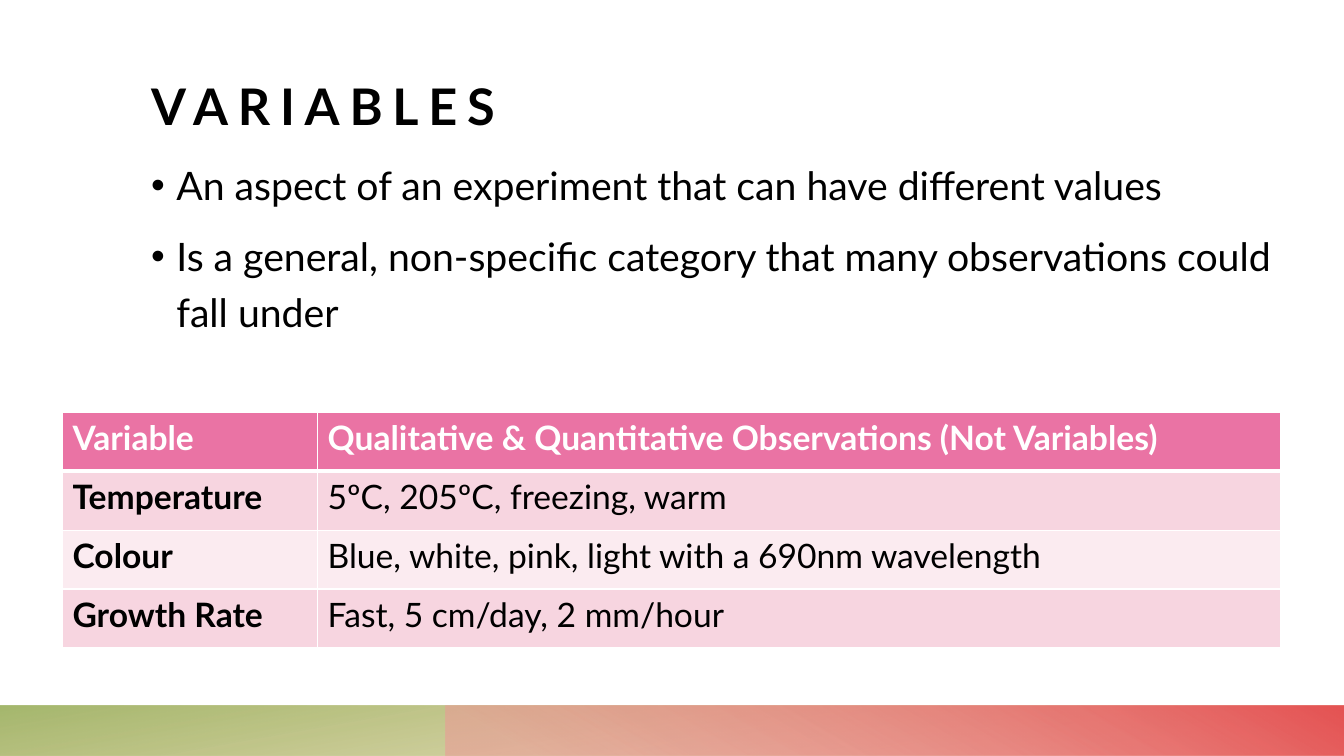
"""Build a slide on variables with a bullet list and a table of examples."""
from lxml.etree import SubElement
from pptx import Presentation
from pptx.dml.color import RGBColor
from pptx.enum.shapes import MSO_SHAPE
from pptx.enum.text import MSO_ANCHOR, MSO_AUTO_SIZE
from pptx.oxml.ns import qn
from pptx.util import Inches, Pt

TITLE = "VARIABLES"
POINTS = [
    "An aspect of an experiment that can have different values",
    "Is a general, non-specific category that many observations could fall under",
]
ROWS = [
    ("Variable", "Qualitative & Quantitative Observations (Not Variables)"),
    ("Temperature", "5ºC, 205ºC, freezing, warm"),
    ("Colour", "Blue, white, pink, light with a 690nm wavelength"),
    ("Growth Rate", "Fast, 5 cm/day, 2 mm/hour"),
]
FONT = "Lato"
COLORS = {
    "ink": "000000", "white": "FFFFFF", "head": "EA73A4",
    "odd": "F7D5E0", "even": "FBEBF0",
    "olive": "B6A343", "green": "95AB54", "blush": "EF9898", "red": "E55454",
}
WIDE, HIGH = 13.33, 7.5
BAND = HIGH / 15
SPLIT = 4.42
LEFT, SPAN = 1.5, 11.2
COLS, ROW = (2.53, 9.55), 0.585
BARS = [
    (0, WIDE, 180, 100, [(14, "olive", 28), (100, "green", 85)]),
    (SPLIT, WIDE - SPLIT, 0, 240, [(9, "blush", 55), (99, "red", 100)]),
]


def node(parent, tag, **attrs):
    return SubElement(parent, qn(tag), {k: str(v) for k, v in attrs.items()})


def style(par, size, color="ink", bold=False):
    for run in par.runs:
        font = run.font
        font.name, font.size, font.bold = FONT, Pt(size), bold
        font.color.rgb = RGBColor.from_string(COLORS[color])


def place(shape, left, top, width, height):
    shape.left, shape.top = Inches(left), Inches(top)
    shape.width, shape.height = Inches(width), Inches(height)


def clear(frame, anchor):
    frame.margin_left = frame.margin_right = 0
    frame.margin_top = frame.margin_bottom = 0
    frame.word_wrap = True
    frame.auto_size = MSO_AUTO_SIZE.NONE
    frame.vertical_anchor = anchor


def add_bar(slide, left, width, turn, angle, stops):
    bar = slide.shapes.add_shape(
        MSO_SHAPE.RECTANGLE, Inches(left), Inches(HIGH - BAND),
        Inches(width), Inches(BAND))
    bar.shadow.inherit = False
    bar.line.fill.background()
    bar.rotation = turn
    bar._element.spPr.find(qn("a:xfrm")).set("flipH", "1")
    bar.fill.gradient()
    grad = bar._element.spPr.find(qn("a:gradFill"))
    for child in list(grad):
        grad.remove(child)
    grad.set("rotWithShape", "1")
    group = node(grad, "a:gsLst")
    for spot, name, alpha in stops:
        stop = node(group, "a:gs", pos=spot * 1000)
        color = node(stop, "a:srgbClr", val=COLORS[name])
        node(color, "a:alpha", val=alpha * 1000)
    node(grad, "a:lin", ang=angle * 60000, scaled=0)


def add_title(slide):
    title = slide.shapes.title
    place(title, LEFT, 0, SPAN, 1.35)
    frame = title.text_frame
    frame.text = TITLE
    clear(frame, MSO_ANCHOR.BOTTOM)
    par = frame.paragraphs[0]
    par._p.get_or_add_pPr().set("algn", "l")
    style(par, 36, bold=True)
    par.runs[0].font._element.set("spc", "700")


def add_list(slide):
    body = slide.placeholders[1]
    place(body, LEFT, 1.51, SPAN, 4.76)
    frame = body.text_frame
    frame.text = "\n".join(POINTS)
    clear(frame, MSO_ANCHOR.TOP)
    for par in frame.paragraphs:
        par.line_spacing, par.space_before = 1.2, Pt(10)
        props = par._p.get_or_add_pPr()
        props.set("marL", str(Inches(0.25)))
        props.set("indent", str(-Inches(0.25)))
        node(props, "a:buFont", typeface="Arial")
        node(props, "a:buChar", char="•")
        style(par, 28)


def add_edges(cell, row):
    props = cell._tc.get_or_add_tcPr()
    thick = {(0, "B"), (1, "T")}
    for side in "LRTB":
        width = Pt(3 if (row, side) in thick else 1)
        line = node(props, f"a:ln{side}", w=width)
        node(node(line, "a:solidFill"), "a:srgbClr", val=COLORS["white"])


def add_grid(slide):
    table = slide.shapes.add_table(
        len(ROWS), len(COLS), Inches(0.62), Inches(4.09),
        Inches(sum(COLS)), Inches(ROW * len(ROWS))).table
    for col, width in zip(table.columns, COLS):
        col.width = Inches(width)
    for r, texts in enumerate(ROWS):
        table.rows[r].height = Inches(ROW)
        tint = "head" if r == 0 else "odd" if r % 2 else "even"
        for c, text in enumerate(texts):
            cell = table.cell(r, c)
            add_edges(cell, r)
            cell.fill.solid()
            cell.fill.fore_color.rgb = RGBColor.from_string(COLORS[tint])
            cell.text_frame.text = text
            style(cell.text_frame.paragraphs[0], 24,
                  "ink" if r else "white", r == 0 or c == 0)


def main():
    deck = Presentation()
    deck.slide_width, deck.slide_height = Inches(WIDE), Inches(HIGH)
    slide = deck.slides.add_slide(deck.slide_layouts[1])
    for bar in BARS:
        add_bar(slide, *bar)
    add_title(slide)
    add_list(slide)
    add_grid(slide)
    deck.save("out.pptx")


if __name__ == "__main__":
    main()
